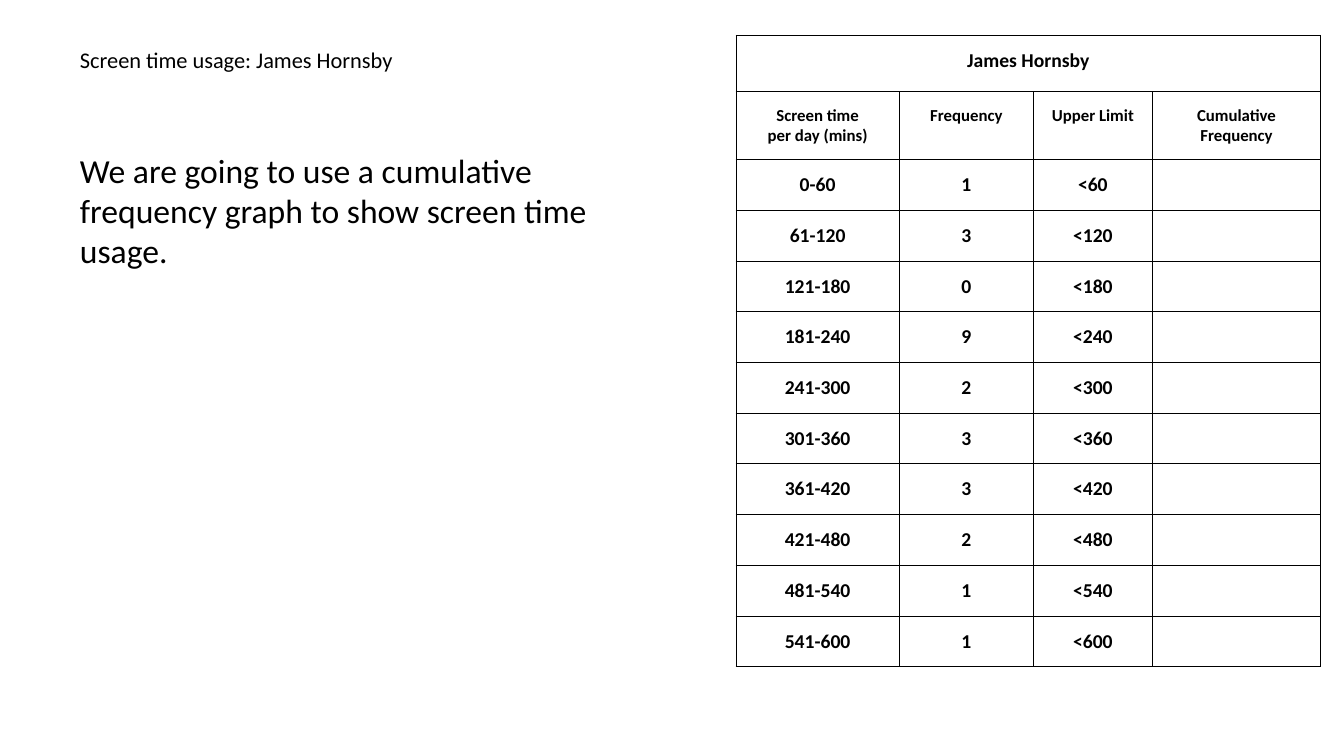
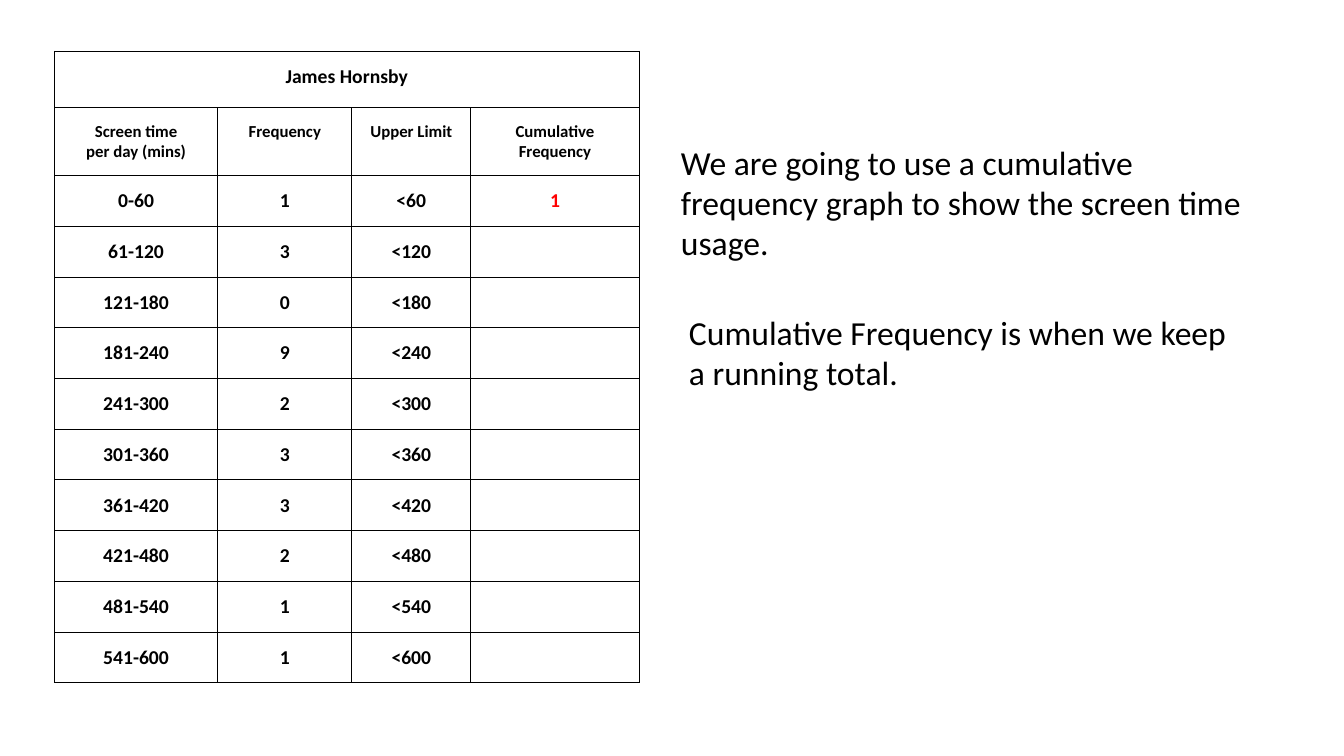
from lxml.etree import SubElement
from pptx import Presentation
from pptx.dml.color import RGBColor
from pptx.enum.text import MSO_ANCHOR, MSO_AUTO_SIZE, PP_ALIGN
from pptx.oxml.ns import qn
from pptx.util import Inches, Pt

BLACK = RGBColor(0x00, 0x00, 0x00)
RED = RGBColor(0xFF, 0x00, 0x00)
FONT = "Calibri"
INSET = Inches(2 / 15)
TITLE_ONLY, BLANK = 5, 6

STUDENT = "James Hornsby"
HEADINGS = ["Screen time\nper day (mins)", "Frequency", "Upper Limit", "Cumulative Frequency"]
FREQUENCIES = [1, 3, 0, 9, 2, 3, 3, 2, 1, 1]
CLASS_WIDTH = 60
COLUMN_WIDTHS = [1.62, 1.33, 1.18, 1.67]
ROW_HEIGHTS = [0.56, 0.67] + [0.5] * len(FREQUENCIES)


def set_insets(target):
    """Give a cell or text frame the shared inner margins."""
    target.margin_left = target.margin_right = INSET
    target.margin_top = target.margin_bottom = INSET


def style_paragraph(paragraph, size, color=BLACK, bold=False, align=PP_ALIGN.LEFT):
    """Apply the shared font to one paragraph."""
    paragraph.alignment = align
    font = paragraph.font
    font.name, font.size, font.bold = FONT, Pt(size), bold
    font.color.rgb = color


def format_text(shape, text, size):
    """Fill a shape with one top-anchored, wrapped paragraph."""
    frame = shape.text_frame
    frame.text = text
    frame.word_wrap = True
    frame.auto_size = MSO_AUTO_SIZE.NONE
    frame.vertical_anchor = MSO_ANCHOR.TOP
    set_insets(frame)
    style_paragraph(frame.paragraphs[0], size)


def add_title(slide, text, left, top, width, height):
    """Move and format the title placeholder."""
    title = slide.shapes.title
    title.left, title.top = Inches(left), Inches(top)
    title.width, title.height = Inches(width), Inches(height)
    format_text(title, text, 16)
    title.text_frame.paragraphs[0].line_spacing = 0.9


def add_statement(slide, text, left, top, width, height):
    """Add a large explanatory text box."""
    box = slide.shapes.add_textbox(Inches(left), Inches(top), Inches(width), Inches(height))
    format_text(box, text, 24)


def outline_cell(cell):
    """Draw thin black borders and clear the fill."""
    properties = cell._tc.get_or_add_tcPr()
    for side in ("a:lnL", "a:lnR", "a:lnT", "a:lnB"):
        line = SubElement(properties, qn(side), w=str(Pt(0.75)))
        fill = SubElement(line, qn("a:solidFill"))
        SubElement(fill, qn("a:srgbClr"), val=str(BLACK))
    cell.fill.background()


def write_cell(cell, text, size, color=BLACK):
    """Write bold centred text into a cell."""
    set_insets(cell)
    cell.text = text
    for paragraph in cell.text_frame.paragraphs:
        style_paragraph(paragraph, size, color, True, PP_ALIGN.CENTER)


def add_frequency_table(slide, left, top, totals=()):
    """Add the screen time table with any running totals known so far."""
    table = slide.shapes.add_table(
        len(ROW_HEIGHTS), len(COLUMN_WIDTHS), Inches(left), Inches(top),
        Inches(sum(COLUMN_WIDTHS)), Inches(sum(ROW_HEIGHTS))).table
    table.first_row = table.horz_banding = False
    for column, width in zip(table.columns, COLUMN_WIDTHS):
        column.width = Inches(width)
    for row, height in zip(table.rows, ROW_HEIGHTS):
        row.height = Inches(height)
        for cell in row.cells:
            outline_cell(cell)

    table.cell(0, 0).merge(table.cell(0, len(COLUMN_WIDTHS) - 1))
    write_cell(table.cell(0, 0), STUDENT, 14)
    for column, heading in enumerate(HEADINGS):
        write_cell(table.cell(1, column), heading, 12)
    for index, frequency in enumerate(FREQUENCIES):
        lower = index * CLASS_WIDTH + (index > 0)
        upper = (index + 1) * CLASS_WIDTH
        for column, text in enumerate((f"{lower}-{upper}", str(frequency), f"<{upper}")):
            write_cell(table.cell(index + 2, column), text, 14)
    for index, total in enumerate(totals):
        write_cell(table.cell(index + 2, 3), str(total), 14, RED)


def build_introduction(presentation):
    """Build the slide that presents the data."""
    slide = presentation.slides.add_slide(presentation.slide_layouts[TITLE_ONLY])
    add_title(slide, f"Screen time usage: {STUDENT}", 0.66, 0.35, 4.32, 1)
    add_statement(slide, "We are going to use a cumulative frequency graph to show "
                  "screen time usage.", 0.66, 1.35, 6.13, 1.24)
    add_frequency_table(slide, 7.3, 0.35)


def build_running_total(presentation):
    """Build the slide that starts the running total."""
    slide = presentation.slides.add_slide(presentation.slide_layouts[BLANK])
    add_frequency_table(slide, 0.54, 0.51, FREQUENCIES[:1])
    add_statement(slide, "We are going to use a cumulative frequency graph to show "
                  "the screen time usage.", 6.62, 1.27, 6.13, 1.24)
    add_statement(slide, "Cumulative Frequency is when we keep a running total.",
                  6.7, 2.96, 5.74, 0.79)


def main():
    """Build and save the presentation."""
    presentation = Presentation()
    presentation.slide_width, presentation.slide_height = Inches(13.33), Inches(7.5)
    build_introduction(presentation)
    build_running_total(presentation)
    presentation.save("out.pptx")


if __name__ == "__main__":
    main()
